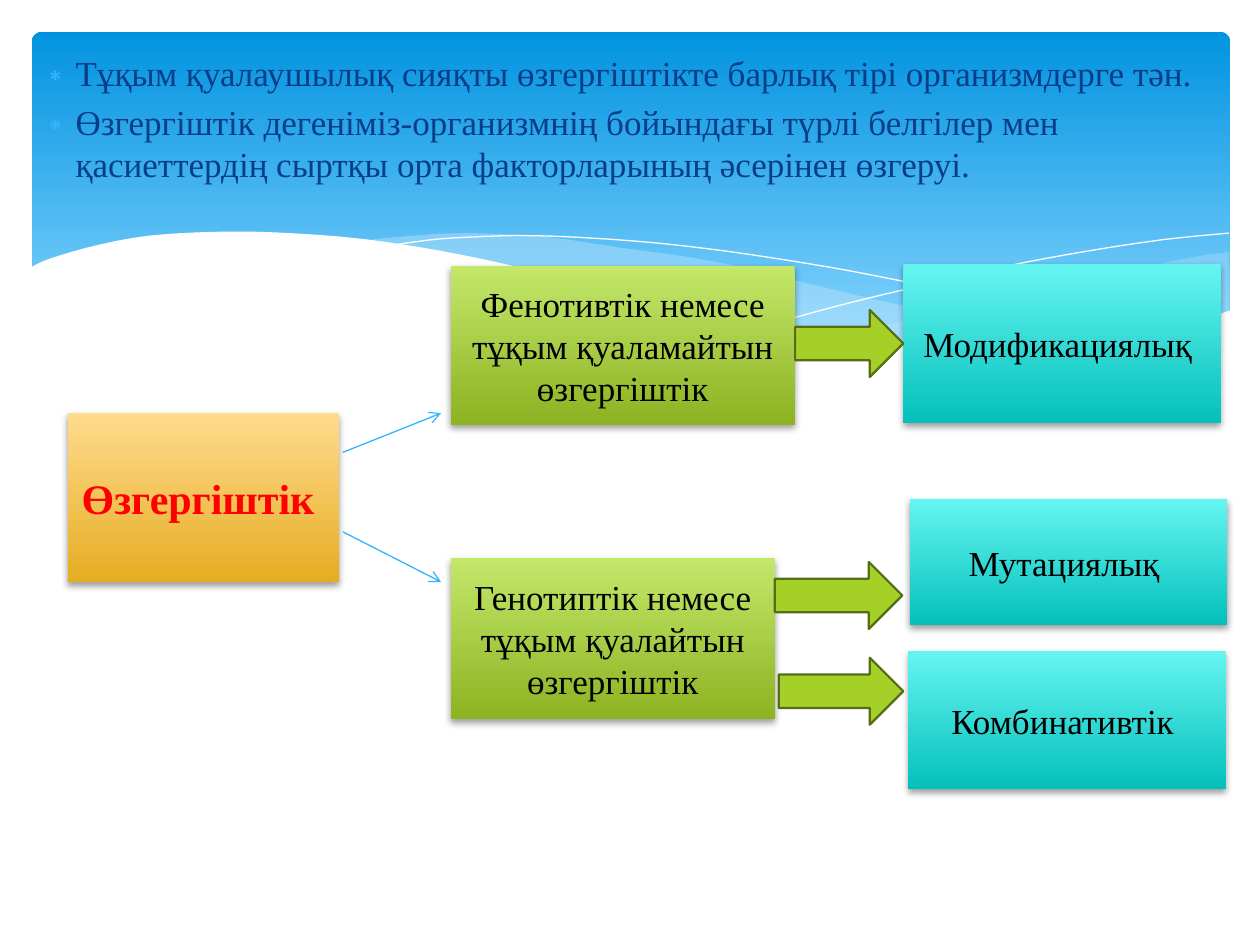
from typing import NamedTuple

from lxml.etree import SubElement
from pptx import Presentation
from pptx.dml.color import RGBColor
from pptx.enum.shapes import MSO_CONNECTOR, MSO_SHAPE as SHAPE
from pptx.enum.text import MSO_ANCHOR, MSO_AUTO_SIZE, PP_ALIGN
from pptx.oxml.ns import qn
from pptx.util import Cm, Pt

FONT = "Times New Roman"
SKY, PALE, WHITE, NAVY = "31B6FD", "C6E7FC", "FFFFFF", "073E87"
AMBER = ("FFDB8E", "E6AD22")
GREEN = ("C3E86A", "8DB222")
TEAL = ("65F5F1", "04C0BB")

Point = tuple[float, float]


class Wave(NamedTuple):
    """Curves are joined end to end; a two-point curve is straight."""
    curves: list[list[Point]]
    fill: str | None = None
    opacity: int = 100


class Box(NamedTuple):
    text: str
    left: float
    top: float
    width: float
    height: float
    colors: tuple[str, str]
    size: int = 20
    color: str = "000000"
    bold: bool = False


class BlockArrow(NamedTuple):
    left: float
    top: float
    width: float


class Branch(NamedTuple):
    start: Point
    end: Point


WAVES = [
    Wave([[(24.77, 5.08), (24.08, 5.18), (23.01, 5.4), (21.87, 5.66), (20.45, 6.02),
           (19.13, 6.27), (17.93, 6.53), (16.79, 6.73)],
          [(16.79, 6.73), (17.91, 6.88), (18.92, 6.99), (19.84, 7.04), (20.68, 7.06),
           (21.44, 7.04), (22.15, 6.96), (22.79, 6.86), (23.39, 6.73), (23.93, 6.58),
           (24.77, 6.27)]], PALE, 29),
    Wave([[(22.68, 6.93), (21.26, 6.73), (19.69, 6.45), (17.93, 6.1), (15.98, 5.64),
           (14.83, 5.36), (13.74, 5.16), (12.42, 4.98), (11.23, 4.8), (10.13, 4.72),
           (9.17, 4.7), (8.33, 4.75), (7.26, 4.85)],
          [(7.26, 4.85), (8.2, 4.98), (9.19, 5.16), (10.26, 5.36), (11.4, 5.64),
           (13.46, 6.1), (15.27, 6.48), (16.89, 6.76), (18.36, 6.96), (19.63, 7.04),
           (20.78, 7.06), (21.79, 7.04), (22.68, 6.93)]], PALE, 40),
    Wave([[(7.85, 4.95), (8.74, 4.83), (9.5, 4.78), (10.57, 4.75), (11.91, 4.8),
           (13.54, 4.93), (15.44, 5.18), (17.65, 5.56), (20.19, 6.12), (23.04, 6.91)]]),
    Wave([[(15.57, 6.53), (17.07, 6.12), (19, 5.66), (20.47, 5.33), (22, 5.05),
           (23.47, 4.83), (24.77, 4.7)]]),
    Wave([[(24.82, 6.25), (23.62, 6.65), (22.23, 6.93), (20.55, 7.04), (18.44, 6.91),
           (15.9, 6.55), (13.44, 6.07), (11.35, 5.59), (9.27, 5.13), (7.42, 4.83),
           (5.84, 4.7), (4.5, 4.67), (3.02, 4.75), (1.93, 4.95), (1.02, 5.21),
           (0.58, 5.41)],
          [(0.58, 5.41), (0.58, 8.36)], [(0.58, 8.36), (24.82, 8.36)]], WHITE),
]
INTRO = [
    "Тұқым қуалаушылық сияқты өзгергіштікте барлық тірі организмдерге тән.",
    "Өзгергіштік дегеніміз-организмнің бойындағы түрлі белгілер мен "
    "қасиеттердің сыртқы орта факторларының әсерінен өзгеруі.",
]
BOXES = [
    Box("Өзгергіштік ", 1.37, 8.33, 5.46, 3.4, AMBER, 24, "FF0000", True),
    Box("Фенотивтік немесе тұқым қуаламайтын өзгергіштік", 9.09, 5.36, 6.93, 3.2, GREEN),
    Box("Генотиптік немесе тұқым қуалайтын өзгергіштік", 9.09, 11.25, 6.53, 3.25, GREEN),
    Box("Модификациялық ", 18.21, 5.33, 6.4, 3.2, TEAL),
    Box("Мутациялық ", 18.34, 10.06, 6.4, 2.54, TEAL),
    Box("Комбинативтік ", 18.31, 13.13, 6.4, 2.77, TEAL),
]
BLOCK_ARROWS = [BlockArrow(16.03, 6.25, 2.18), BlockArrow(15.62, 11.33, 2.57),
                BlockArrow(15.7, 13.26, 2.51)]
BRANCHES = [Branch((6.91, 9.12), (8.89, 8.33)), Branch((6.91, 10.72), (8.89, 11.73))]


def rgb(value: str) -> RGBColor:
    return RGBColor.from_string(value)


def add_xml(parent, tag: str, **attrs):
    return SubElement(parent, qn(tag), {k: str(v) for k, v in attrs.items()})


def fill_gradient(s, colors: tuple[str, str], last: float = 1) -> None:
    """Fill from top to bottom, reaching the second colour at `last`."""
    s.fill.gradient()
    s.fill.gradient_angle = 270
    for stop, color, position in zip(s.fill.gradient_stops, colors, (0, last)):
        stop.color.rgb = rgb(color)
        stop.position = position


def smooth(knots: list[Point], steps: int = 5) -> list[Point]:
    """Catmull-Rom curve through the knots, without the first knot."""
    if len(knots) == 2:
        return knots[1:]
    ends = [knots[0], *knots, knots[-1]]
    return [
        tuple(b + (c - a) * t / 2 + (2 * a - 5 * b + 4 * c - d) * t**2 / 2
              + (3 * b - a - 3 * c + d) * t**3 / 2
              for a, b, c, d in zip(*ends[i:i + 4]))
        for i in range(len(knots) - 1)
        for t in (n / steps for n in range(1, steps + 1))
    ]


def add_run(p, text: str, size: int, color: str, bold: bool = False) -> None:
    r = p.add_run()
    r.text = text
    r.font.name, r.font.size, r.font.bold = FONT, Pt(size), bold
    r.font.color.rgb = rgb(color)


def add_banner(shapes) -> None:
    s = shapes.add_shape(SHAPE.ROUNDED_RECTANGLE, Cm(0.64), Cm(0.64), Cm(24.16), Cm(6.86))
    s.adjustments[0] = 0.03
    s.shadow.inherit = False
    s.line.fill.background()
    fill_gradient(s, ("0293E0", "83D3FE"), 0.9)


def add_wave(shapes, wave: Wave) -> None:
    x, y = wave.curves[0][0]
    fb = shapes.build_freeform(Cm(x), Cm(y))
    points = [pt for curve in wave.curves for pt in smooth(curve)]
    fb.add_line_segments([(Cm(x), Cm(y)) for x, y in points], close=bool(wave.fill))
    s = fb.convert_to_shape()
    s.shadow.inherit = False
    if not wave.fill:
        s.fill.background()
        s.line.color.rgb, s.line.width = rgb(WHITE), Pt(0)
        return
    s.line.fill.background()
    s.fill.solid()
    s.fill.fore_color.rgb = rgb(wave.fill)
    color = s.element.spPr.find(".//" + qn("a:srgbClr"))
    add_xml(color, "a:alpha", val=wave.opacity * 1000)


def fill_intro(body) -> None:
    body.left, body.top, body.width, body.height = Cm(0.51), Cm(0.91), Cm(24.21), Cm(16.1)
    tf = body.text_frame
    tf.auto_size = MSO_AUTO_SIZE.NONE
    for i, text in enumerate(INTRO):
        p = tf.add_paragraph() if i else tf.paragraphs[0]
        p.space_before = Pt(4)
        pr = p._p.get_or_add_pPr()
        pr.set("marL", str(int(Cm(0.76))))
        pr.set("indent", str(int(Cm(-0.76))))
        add_xml(add_xml(pr, "a:buClr"), "a:srgbClr", val=SKY)
        add_xml(pr, "a:buChar", char="∗")
        add_run(p, text, 20, NAVY)


def add_box(shapes, box: Box) -> None:
    s = shapes.add_shape(SHAPE.RECTANGLE, Cm(box.left), Cm(box.top),
                         Cm(box.width), Cm(box.height))
    fill_gradient(s, box.colors)
    s.line.fill.background()
    s.shadow.inherit = False
    shadow = add_xml(s.element.spPr.find(qn("a:effectLst")), "a:outerShdw",
                     blurRad=int(Pt(4)), dist=int(Pt(2)), dir=90 * 60000, rotWithShape=0)
    add_xml(add_xml(shadow, "a:srgbClr", val="000000"), "a:alpha", val=38000)
    tf = s.text_frame
    tf.word_wrap, tf.vertical_anchor = True, MSO_ANCHOR.MIDDLE
    p = tf.paragraphs[0]
    p.alignment = PP_ALIGN.CENTER
    add_run(p, box.text, box.size, box.color, box.bold)


def add_block_arrow(shapes, arrow: BlockArrow) -> None:
    s = shapes.add_shape(SHAPE.RIGHT_ARROW, Cm(arrow.left), Cm(arrow.top),
                         Cm(arrow.width), Cm(1.35))
    s.shadow.inherit = False
    s.fill.solid()
    s.fill.fore_color.rgb = rgb("A5D028")
    s.line.color.rgb, s.line.width = rgb("566D15"), Pt(1.25)


def add_branch(shapes, branch: Branch) -> None:
    c = shapes.add_connector(MSO_CONNECTOR.STRAIGHT,
                             *(Cm(v) for v in branch.start + branch.end))
    c.line.color.rgb, c.line.width = rgb(SKY), Pt(0.75)
    sp_pr = c._element.spPr
    add_xml(sp_pr.find(qn("a:ln")), "a:tailEnd", type="arrow")
    add_xml(sp_pr, "a:effectLst")


def main() -> None:
    prs = Presentation()
    prs.slide_width, prs.slide_height = Cm(25.4), Cm(19.05)
    slide = prs.slides.add_slide(prs.slide_layouts[1])
    shapes = slide.shapes
    title, body = slide.placeholders
    title.element.getparent().remove(title.element)
    add_banner(shapes)
    for wave in WAVES:
        add_wave(shapes, wave)
    fill_intro(body)
    body.element.getparent().append(body.element)  # in front of the banner
    for add, items in ((add_box, BOXES), (add_block_arrow, BLOCK_ARROWS),
                       (add_branch, BRANCHES)):
        for item in items:
            add(shapes, item)
    prs.save("out.pptx")


if __name__ == "__main__":
    main()
